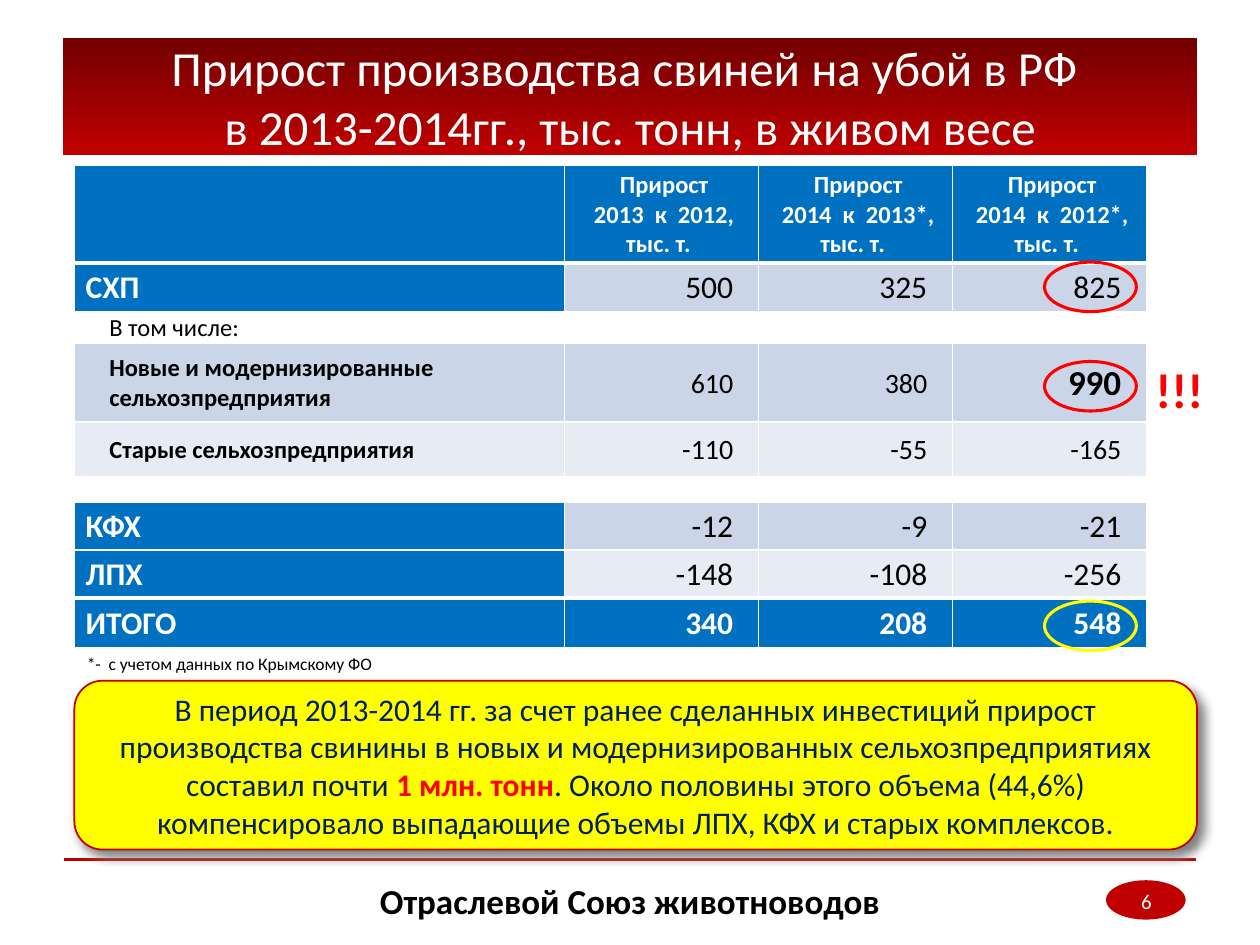
from lxml.etree import SubElement
from pptx import Presentation
from pptx.dml.color import RGBColor
from pptx.enum.shapes import MSO_CONNECTOR, MSO_SHAPE
from pptx.enum.text import MSO_ANCHOR, PP_ALIGN
from pptx.oxml import parse_xml
from pptx.oxml.ns import nsdecls, qn
from pptx.util import Pt

COLORS = {
    "white": "FFFFFF", "black": "000000", "navy": "002060", "blue": "0070C0",
    "band": "CBD5E8", "light": "E7EBF4", "red": "FF0000", "crimson": "C00000",
    "maroon": "720000", "yellow": "FFFF00", "grey": "808080",
}


def rgb(name):
    return RGBColor.from_string(COLORS[name])


class SlideBuilder:
    """Holds the font and the current page, and adds styled elements."""

    def __init__(self, page, font="Calibri"):
        self.page = page
        self.font = font

    def style(self, span, size, color, bold=False):
        span.font.name = self.font
        span.font.size = Pt(size)
        span.font.bold = bold
        span.font.color.rgb = rgb(color)

    def fill_text(self, frame, text, size, color, bold=False, align=PP_ALIGN.LEFT):
        frame.word_wrap = True
        frame.text = text
        for paragraph in frame.paragraphs:
            paragraph.alignment = align
            for span in paragraph.runs:
                self.style(span, size, color, bold)

    def text(self, at, text, size, color, bold=False, align=PP_ALIGN.CENTER,
             anchor=MSO_ANCHOR.MIDDLE, inset=None):
        box = self.page.shapes.add_textbox(*map(Pt, at))
        frame = box.text_frame
        self.fill_text(frame, text, size, color, bold, align)
        frame.vertical_anchor = anchor
        if inset is not None:
            frame.margin_left = frame.margin_right = Pt(inset)
            frame.margin_top = frame.margin_bottom = Pt(inset)

    def shape(self, kind, at, fill=None, line=None, width=1):
        shape = self.page.shapes.add_shape(kind, *map(Pt, at))
        shape.shadow.inherit = False
        if fill:
            shape.fill.solid()
            shape.fill.fore_color.rgb = rgb(fill)
        else:
            shape.fill.background()
        if line:
            shape.line.color.rgb = rgb(line)
            shape.line.width = Pt(width)
        else:
            shape.line.fill.background()
        shape.text_frame.vertical_anchor = MSO_ANCHOR.MIDDLE
        return shape

    def gradient(self, shape, start, end):
        shape.fill.gradient()
        shape.fill.gradient_angle = 270
        for stop, color in zip(shape.fill.gradient_stops, (start, end)):
            stop.color.rgb = rgb(color)

    def drop_shadow(self, shape, color, blur, distance, degrees):
        effects = shape._element.spPr.find(qn("a:effectLst"))
        effects.append(parse_xml(
            f'<a:outerShdw {nsdecls("a")} blurRad="{Pt(blur)}" dist="{Pt(distance)}" '
            f'dir="{degrees * 60000}" algn="tl" rotWithShape="0">'
            f'<a:srgbClr val="{COLORS[color]}"/></a:outerShdw>'))

    def line(self, start, end, color, width):
        line = self.page.shapes.add_connector(
            MSO_CONNECTOR.STRAIGHT, *map(Pt, start + end))
        line.line.color.rgb = rgb(color)
        line.line.width = Pt(width)
        SubElement(line._element.spPr, qn("a:effectLst"))

    def table(self, left, top, widths, heights):
        frame = self.page.shapes.add_table(
            len(heights), len(widths), Pt(left), Pt(top),
            Pt(sum(widths)), Pt(sum(heights)))
        table = frame.table
        table.first_row = table.horz_banding = False
        for column, width in zip(table.columns, widths):
            column.width = Pt(width)
        for row, height in zip(table.rows, heights):
            row.height = Pt(height)
        return table

    def cell(self, cell, text, fill, size, color, bold, align, left, right,
             top_line=1, bottom_line=1):
        properties = cell._tc.get_or_add_tcPr()
        for side, width in zip("LRTB", (1, 1, top_line, bottom_line)):
            properties.append(parse_xml(
                f'<a:ln{side} {nsdecls("a")} w="{Pt(width)}"><a:solidFill>'
                f'<a:srgbClr val="{COLORS["white"]}"/></a:solidFill></a:ln{side}>'))
        cell.fill.solid()
        cell.fill.fore_color.rgb = rgb(fill)
        cell.margin_left, cell.margin_right = Pt(left), Pt(right)
        cell.margin_top, cell.margin_bottom = Pt(0.7), Pt(0)
        cell.vertical_anchor = MSO_ANCHOR.MIDDLE
        if text:
            self.fill_text(cell.text_frame, text, size, color, bold, align)
        else:
            # Small end mark keeps an empty row low
            SubElement(cell.text_frame.paragraphs[0]._p, qn("a:endParaRPr"), sz="800")


def growth_table(builder):
    # Row: height, label, values, label fill, value fill, value size
    header = [f" Прирост\n {years}, тыс. т. " for years in
              ("2013  к  2012", "2014  к  2013*", "2014  к  2012*")]
    blank = [""] * 3
    rows = [
        (56, "", header, "blue", "blue", 14),
        (28, "СХП", ["500", "325", "825"], "blue", "band", 18),
        (18, "В том числе:", blank, "white", "white", 14),
        (45, "Новые и модернизированные сельхозпредприятия",
         ["610", "380", "990"], "band", "band", 16),
        (31, "Старые сельхозпредприятия", ["-110", "-55", "-165"], "light", "light", 16),
        (14.5, "", blank, "white", "white", 8),
        (27.5, "КФХ", ["-12", "-9", "-21"], "blue", "band", 18),
        (27.5, "ЛПХ", ["-148", "-108", "-256"], "blue", "light", 18),
        (28.5, "ИТОГО", ["340", "208", "548"], "blue", "blue", 18),
    ]
    table = builder.table(42.5, 94.3, [280] + [110.9] * 3, [row[0] for row in rows])
    last = len(rows) - 1
    for index, (_, label, values, label_fill, value_fill, size) in enumerate(rows):
        borders = {"top_line": 3 if index in (1, last) else 1,
                   "bottom_line": 3 if index in (0, last - 1) else 1}
        main_row = label_fill == "blue"
        builder.cell(table.cell(index, 0), label, label_fill, 18 if main_row else 14,
                     "white" if main_row else "black", label_fill != "white",
                     PP_ALIGN.LEFT, 6.5 if main_row else 20, 0.7, **borders)
        strong = value_fill == "blue"
        for column, value in enumerate(values, 1):
            peak = value == "990"
            builder.cell(table.cell(index, column), value, value_fill,
                         20 if peak else size, "white" if strong else "black",
                         strong or peak,
                         PP_ALIGN.CENTER if index == 0 else PP_ALIGN.RIGHT,
                         0.7, 0.7 if index == 0 else 14.4, **borders)


def main():
    deck = Presentation()
    deck.slide_width, deck.slide_height = Pt(720), Pt(540)
    builder = SlideBuilder(deck.slides.add_slide(deck.slide_layouts[6]))

    # Footer decoration
    builder.shape(MSO_SHAPE.OVAL, (632, 503, 45.5, 22.5), "crimson")
    builder.line((683.5, 491), (36.5, 491), "crimson", 1.5)

    # Title banner
    banner = builder.shape(MSO_SHAPE.RECTANGLE, (36, 21.6, 648, 67), "crimson")
    builder.gradient(banner, "maroon", "crimson")
    builder.fill_text(banner.text_frame,
                      "Прирост производства свиней на убой в РФ \v"
                      "в 2013-2014гг., тыс. тонн, в живом весе",
                      28, "white", align=PP_ALIGN.CENTER)

    # Conclusion
    callout = builder.shape(MSO_SHAPE.ROUNDED_RECTANGLE, (42.5, 389, 641.5, 96.5),
                            "yellow", "crimson")
    builder.drop_shadow(callout, "grey", 6, 4, 48)
    callout.text_frame.word_wrap = True
    paragraph = callout.text_frame.paragraphs[0]
    paragraph.alignment = PP_ALIGN.CENTER
    for text, color, bold in (
            ("В период 2013-2014 гг. за счет ранее сделанных инвестиций прирост "
             "производства свинины в новых и модернизированных сельхозпредприятиях "
             "составил почти ", "navy", False),
            ("1 млн. тонн", "red", True),
            (". Около половины этого объема (44,6%) компенсировало выпадающие "
             "объемы ЛПХ, КФХ и старых комплексов.", "navy", False)):
        span = paragraph.add_run()
        span.text = text
        builder.style(span, 18, color, bold)

    growth_table(builder)

    # Highlights
    for top, color in ((206.6, "red"), (149.8, "red"), (343.5, "yellow")):
        builder.shape(MSO_SHAPE.OVAL, (596.9, top, 52.5, 28.3), line=color, width=1.75)
    builder.text((657.4, 202.3, 36, 39.6), "!!!", 28, "red", True,
                 PP_ALIGN.LEFT, MSO_ANCHOR.TOP, inset=2.9)

    # Footnote and footer
    builder.text((42.5, 369.4, 481.7, 19.4), "*-  с учетом данных по Крымскому ФО",
                 10, "black", align=PP_ALIGN.LEFT, anchor=MSO_ANCHOR.TOP)
    builder.text((130.3, 500.4, 459.4, 28.8), "Отраслевой Союз животноводов",
                 20, "black", True)
    builder.text((622, 500.4, 66.2, 28.8), "6", 12, "white")

    deck.save("out.pptx")


if __name__ == "__main__":
    main()
